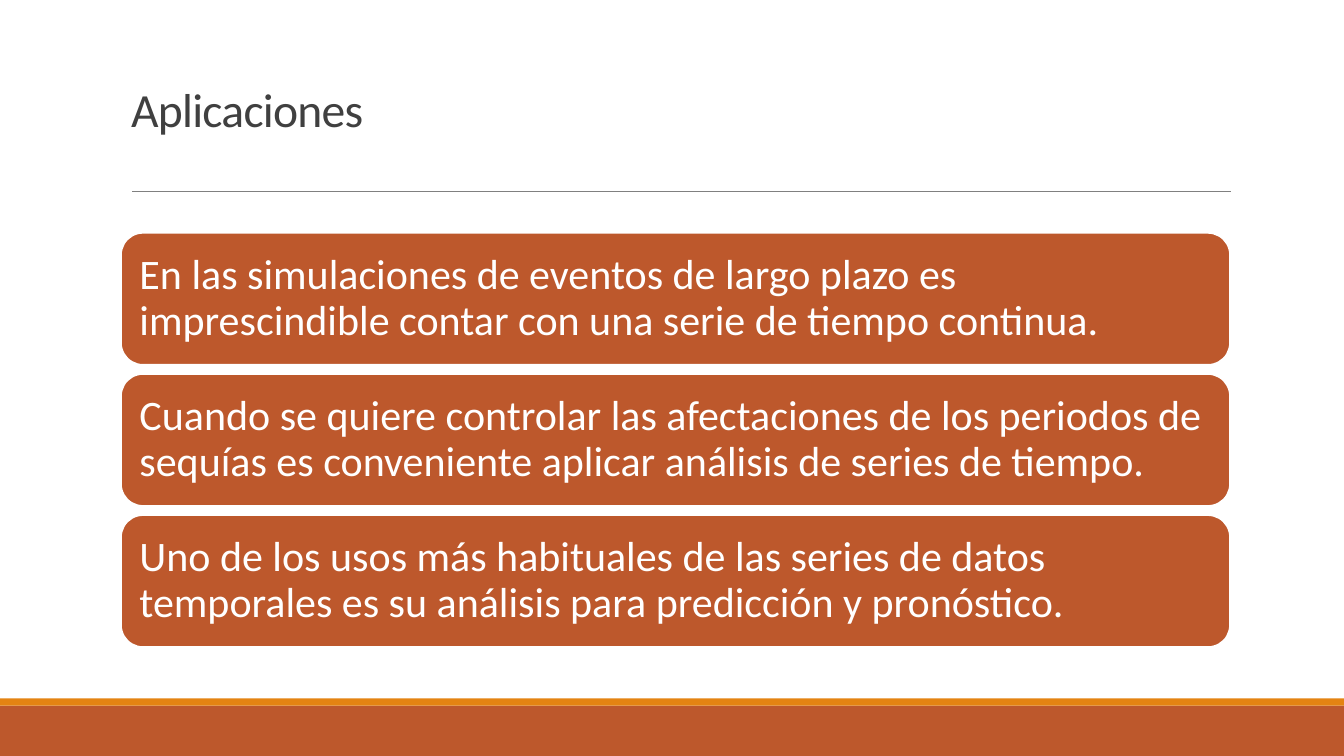
from dataclasses import dataclass

from lxml.etree import SubElement
from pptx import Presentation
from pptx.dml.color import RGBColor
from pptx.enum.shapes import MSO_CONNECTOR as Connector, MSO_SHAPE as Shape
from pptx.enum.text import MSO_ANCHOR as Anchor, PP_ALIGN as Align
from pptx.oxml.ns import qn
from pptx.util import Inches, Pt

HEADING = "Aplicaciones"
APPLICATIONS = [
    "En las simulaciones de eventos de largo plazo es imprescindible contar con una serie de tiempo continua.",
    "Cuando se quiere controlar las afectaciones de los periodos de sequías es conveniente aplicar análisis de series de tiempo.",
    "Uno de los usos más habituales de las series de datos temporales es su análisis para predicción y pronóstico.",
]


@dataclass(frozen=True)
class Theme:
    font: str = "Calibri"
    rust: str = "BD582C"
    orange: str = "E48312"
    gray: str = "808080"
    dark: str = "404040"
    white: str = "FFFFFF"
    heading_size: float = 34
    card_size: float = 30


THEME = Theme()
WIDTH, HEIGHT = 13.33, 7.5
LEFT, CONTENT_WIDTH = 1.2, 11
CARD_TOP, CARD_HEIGHT, CARD_PITCH = 2.31, 1.31, 1.4
FOOTER_BANDS = [(7, 0.5, THEME.rust), (6.93, 0.07, THEME.orange)]


def rgb(color):
    return RGBColor.from_string(color)


def write(frame, text, *, size, color, anchor, line_spacing, margins, tracking=0):
    frame.word_wrap = True
    frame.vertical_anchor = anchor
    frame.margin_left, frame.margin_top, frame.margin_right, frame.margin_bottom = map(Inches, margins)
    paragraph = frame.paragraphs[0]
    paragraph.alignment = Align.LEFT
    paragraph.line_spacing = line_spacing
    run = paragraph.add_run()
    run.text = text
    run.font.name = THEME.font
    run.font.size = Pt(size)
    run.font.color.rgb = rgb(color)
    if tracking:
        run.font._element.set("spc", str(int(tracking * 100)))


def add_block(slide, kind, left, top, width, height, fill, outline=None):
    block = slide.shapes.add_shape(kind, *map(Inches, (left, top, width, height)))
    block.shadow.inherit = False
    block.fill.solid()
    block.fill.fore_color.rgb = rgb(fill)
    if outline:
        block.line.color.rgb = rgb(outline)
        block.line.width = Pt(1.25)
    else:
        block.line.fill.background()
    return block


def main():
    deck = Presentation()
    deck.slide_width, deck.slide_height = Inches(WIDTH), Inches(HEIGHT)
    slide = deck.slides.add_slide(deck.slide_layouts[5])

    for top, height, color in FOOTER_BANDS:
        add_block(slide, Shape.RECTANGLE, 0, top, WIDTH, height, color)

    divider = slide.shapes.add_connector(Connector.STRAIGHT, *map(Inches, (1.31, 1.9, 12.21, 1.9)))
    divider.line.color.rgb = rgb(THEME.gray)
    divider.line.width = Pt(0.5)
    SubElement(divider._element.spPr, qn("a:effectLst"))

    heading = slide.shapes.title
    heading.left, heading.top = Inches(LEFT), Inches(0.31)
    heading.width, heading.height = Inches(CONTENT_WIDTH), Inches(1.59)
    write(heading.text_frame, HEADING, size=THEME.heading_size, color=THEME.dark,
          anchor=Anchor.BOTTOM, line_spacing=0.85, margins=(0.1, 0.05, 0.1, 0.54), tracking=-0.5)

    for index, application in enumerate(APPLICATIONS):
        card = add_block(slide, Shape.ROUNDED_RECTANGLE, LEFT, CARD_TOP + index * CARD_PITCH,
                         CONTENT_WIDTH, CARD_HEIGHT, THEME.rust, THEME.white)
        write(card.text_frame, application, size=THEME.card_size, color=THEME.white,
              anchor=Anchor.MIDDLE, line_spacing=0.9, margins=(0.12,) * 4)

    deck.save("out.pptx")


if __name__ == "__main__":
    main()
